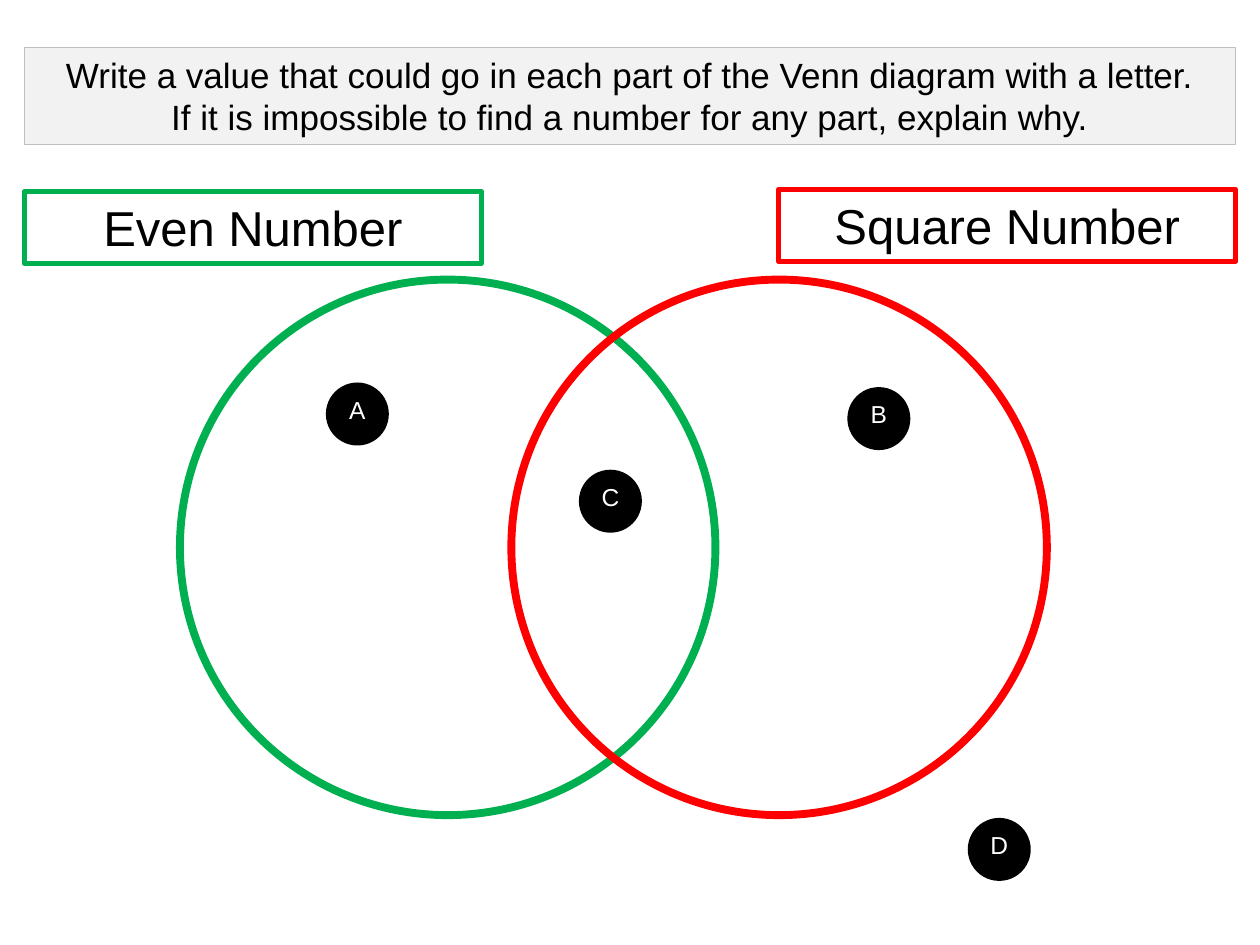
from pptx import Presentation
from pptx.dml.color import RGBColor
from pptx.enum.shapes import MSO_SHAPE
from pptx.enum.text import MSO_ANCHOR, PP_ALIGN
from pptx.util import Pt

GREEN, RED, BLACK, WHITE = "00B050", "FF0000", "000000", "FFFFFF"
INSTRUCTIONS = [
    "Write a value that could go in each part of the Venn diagram with a letter.",
    "If it is impossible to find a number for any part, explain why.",
]


def color(value):
    return RGBColor.from_string(value)


def add_outline(page, kind, box, line, width, fill=None):
    shape = page.shapes.add_shape(kind, *map(Pt, box))
    shape.shadow.inherit = False
    if fill:
        shape.fill.solid()
        shape.fill.fore_color.rgb = color(fill)
    else:
        shape.fill.background()
    shape.line.color.rgb = color(line)
    shape.line.width = Pt(width)
    return shape


def write_lines(shape, lines, size, ink):
    frame = shape.text_frame
    frame.word_wrap = True
    frame.vertical_anchor = MSO_ANCHOR.TOP
    for index, text in enumerate(lines):
        para = frame.add_paragraph() if index else frame.paragraphs[0]
        para.text = text
        para.alignment = PP_ALIGN.CENTER
        para.font.name = "Arial"
        para.font.size = Pt(size)
        para.font.color.rgb = color(ink)


def add_panel(page, box, lines, size, line, width, fill=None):
    panel = add_outline(page, MSO_SHAPE.RECTANGLE, box, line, width, fill)
    write_lines(panel, lines, size, BLACK)


def add_venn(page, left, top, diameter, offset):
    for index, line in enumerate((GREEN, RED)):
        box = (left + index * offset, top, diameter, diameter)
        add_outline(page, MSO_SHAPE.OVAL, box, line, 4.5)


def add_marker(page, left, top, letter, diameter=34):
    box = (left, top, diameter, diameter)
    add_outline(page, MSO_SHAPE.OVAL, box, BLACK, 2, BLACK)
    label = page.shapes.add_textbox(Pt(left + 4), Pt(top + 2.5), Pt(26), Pt(29))
    write_lines(label, [letter], 14, WHITE)


def main():
    deck = Presentation()
    deck.slide_width, deck.slide_height = Pt(720), Pt(540)
    page = deck.slides.add_slide(deck.slide_layouts[6])
    add_panel(page, (14, 109.4, 261, 41.2), ["Even Number"], 28, GREEN, 3)
    add_venn(page, 102.8, 159.8, 306, 189.4)
    markers = {"A": (187.2, 219.6), "B": (485.2, 222.2),
               "C": (331.8, 269.4), "D": (554, 468.4)}
    for letter, (left, top) in markers.items():
        add_marker(page, left, top, letter)
    add_panel(page, (445, 108.2, 261, 41.2), ["Square Number"], 28, RED, 3)
    add_panel(page, (14, 27.2, 692, 55.6), INSTRUCTIONS, 20, "BFBFBF", 0.75, "F2F2F2")
    deck.save("out.pptx")


if __name__ == "__main__":
    main()
